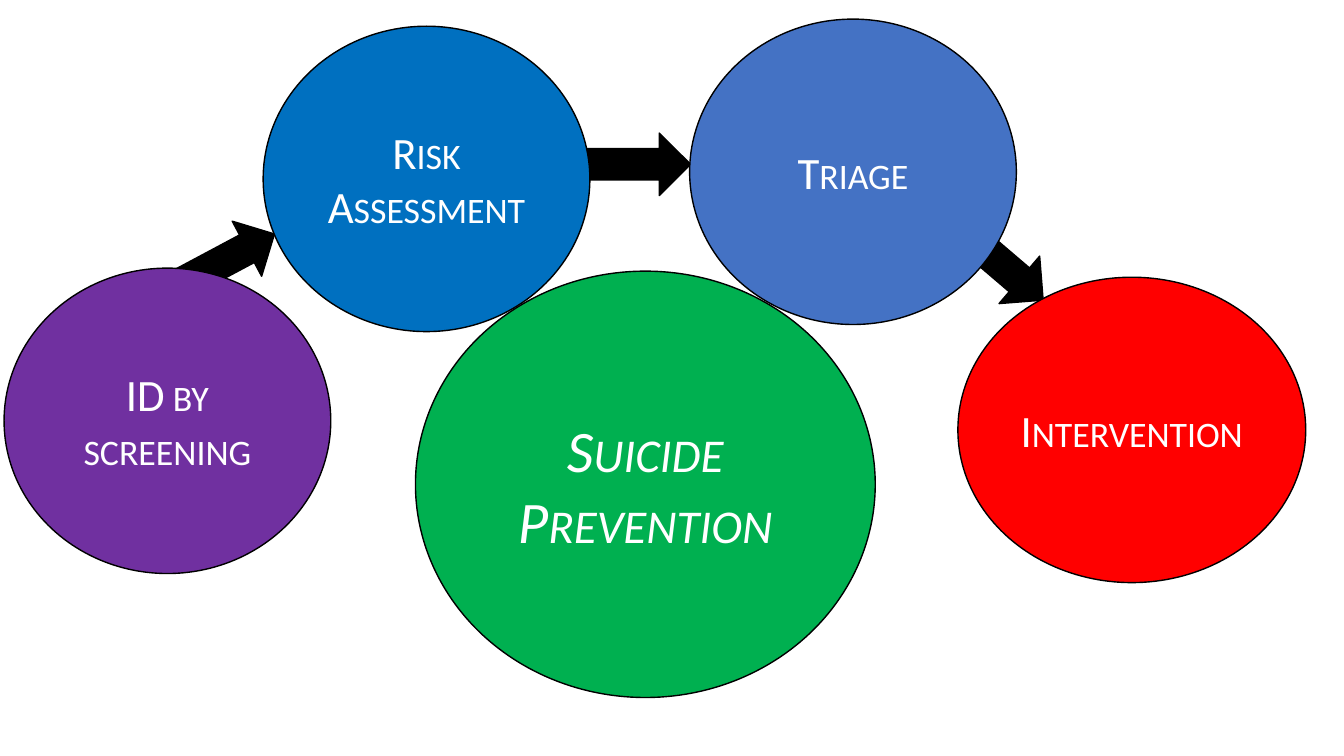
from pptx import Presentation
from pptx import util as u
from pptx.dml.color import RGBColor
from pptx.enum import shapes, text

WIDTH, HEIGHT = u.Inches(13.33), u.Inches(7.5)

BLACK = RGBColor(0x00, 0x00, 0x00)
WHITE = RGBColor(0xFF, 0xFF, 0xFF)
GREEN = RGBColor(0x00, 0xB0, 0x50)
PURPLE = RGBColor(0x70, 0x30, 0xA0)
BLUE = RGBColor(0x00, 0x70, 0xC0)
RED = RGBColor(0xFF, 0x00, 0x00)
INDIGO = RGBColor(0x44, 0x72, 0xC4)

# Shares of the slide, in percent
ARROW_HEIGHT = 8.27
STEP_WIDTH, STEP_HEIGHT = 24.31, 40.4

# Left, top, width, rotation in degrees
ARROWS = [
    (63.02, 26, 16.58, 40.5),
    (39.83, 17.6, 11.55, 0),
    (12.38, 30.4, 8.55, 331.9),
]

# Label, left, top, width, colour
STEPS = [
    ("ID by screening", 0.3, 35.47, STEP_WIDTH, PURPLE),
    ("Risk Assessment", 19.58, 3.47, STEP_WIDTH, BLUE),
    ("Intervention", 71.27, 36.67, 25.88, RED),
    ("Triage", 51.31, 2.53, STEP_WIDTH, INDIGO),
]


def add_outlined(slide, kind, left, top, width, height, color):
    """Add a black-outlined preset shape placed by percent of the slide."""
    shape = slide.shapes.add_shape(
        kind, round(WIDTH * left / 100), round(HEIGHT * top / 100),
        round(WIDTH * width / 100), round(HEIGHT * height / 100))
    shape.shadow.inherit = False
    shape.fill.solid()
    shape.fill.fore_color.rgb = color
    shape.line.color.rgb = BLACK
    shape.line.width = u.Pt(1)
    return shape


def write_text(shape, label, size=32, italic=None, color=WHITE):
    """Write a centred small-caps label."""
    frame = shape.text_frame
    frame.word_wrap = True
    frame.vertical_anchor = text.MSO_ANCHOR.MIDDLE
    paragraph = frame.paragraphs[0]
    paragraph.alignment = text.PP_ALIGN.CENTER
    run = paragraph.add_run()
    run.text = label
    run.font.name = "Calibri"
    run.font.size = u.Pt(size)
    run.font.italic = italic
    run.font.color.rgb = color
    run.font._element.set("cap", "small")


def add_arrow(slide, left, top, width, rotation):
    arrow = add_outlined(slide, shapes.MSO_SHAPE.RIGHT_ARROW,
                         left, top, width, ARROW_HEIGHT, BLACK)
    arrow.rotation = rotation


def add_circle(slide, label, left, top, width, color,
               height=STEP_HEIGHT, **text_format):
    circle = add_outlined(slide, shapes.MSO_SHAPE.OVAL,
                          left, top, width, height, color)
    write_text(circle, label, **text_format)


def main():
    presentation = Presentation()
    presentation.slide_width, presentation.slide_height = WIDTH, HEIGHT
    slide = presentation.slides.add_slide(presentation.slide_layouts[6])

    # Arrows lie behind the circles
    for arrow in ARROWS:
        add_arrow(slide, *arrow)

    # Central goal
    add_circle(slide, "Suicide Prevention", 30.91, 35.87, 34.21, GREEN,
               height=56.4, size=42, italic=True)

    # Steps around it
    for step in STEPS:
        add_circle(slide, *step)

    presentation.save("out.pptx")


if __name__ == "__main__":
    main()
